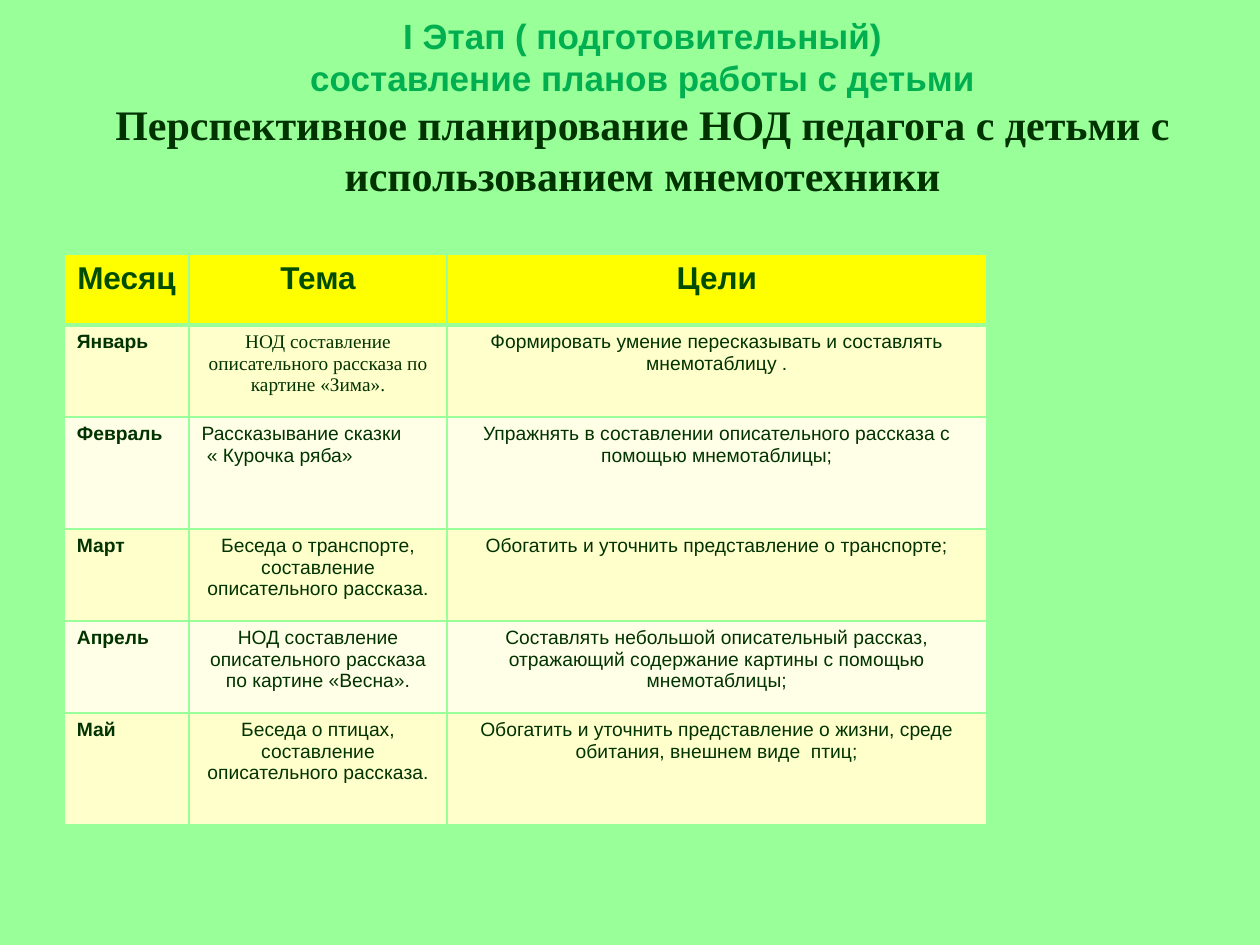
from lxml import etree
from pptx import Presentation
from pptx import util as u
from pptx.dml.color import RGBColor
from pptx.enum import text
from pptx.oxml import ns

COLORS = {
    "background": "99FF99", "stage": "00B050", "dark": "003300",
    "header_text": "004C00", "header": "FFFF00", "odd": "FFFFCC", "even": "FFFFE7",
}


def add_run(p, words, size, color, bold=False, font="Arial"):
    r = p.add_run()
    r.text = words
    r.font.size = u.Pt(size)
    r.font.name = font
    r.font.bold = bold
    r.font.color.rgb = RGBColor.from_string(COLORS[color])


def set_borders(cell, bottom):
    tcPr = cell._tc.get_or_add_tcPr()
    widths = {"a:lnL": 1, "a:lnR": 1, "a:lnT": 1, "a:lnB": bottom}
    for i, (tag, width) in enumerate(widths.items()):
        ln = etree.Element(ns.qn(tag), w=str(u.Pt(width)))
        fill = etree.SubElement(ln, ns.qn("a:solidFill"))
        etree.SubElement(fill, ns.qn("a:srgbClr"), val=COLORS["background"])
        tcPr.insert(i, ln)


prs = Presentation()
prs.slide_width, prs.slide_height = u.Inches(10), u.Inches(7.5)
s = prs.slides.add_slide(prs.slide_layouts[5])
s.background.fill.solid()
s.background.fill.fore_color.rgb = RGBColor.from_string(COLORS["background"])

# Title
title = s.shapes.title
title.left, title.top = u.Inches(0.2), u.Inches(0)
title.width, title.height = u.Inches(9.8), u.Inches(1.7)
tf = title.text_frame
tf.word_wrap = True
tf.auto_size = text.MSO_AUTO_SIZE.NONE
tf.vertical_anchor = text.MSO_ANCHOR.MIDDLE
p = tf.paragraphs[0]
p.alignment = text.PP_ALIGN.CENTER
for line in ("I Этап ( подготовительный)", "составление планов работы с детьми"):
    add_run(p, line, 20, "stage", True)
    p.add_line_break()
add_run(p, "Перспективное планирование НОД педагога с детьми с использованием мнемотехники",
        24, "dark", True, "Times New Roman")

# Plan by month
plan = [
    ("Месяц", "Тема", "Цели"),
    ("Январь", "НОД составление описательного рассказа по картине «Зима».",
     "Формировать умение пересказывать и составлять мнемотаблицу ."),
    ("Февраль", "Рассказывание сказки\n « Курочка ряба»",
     "Упражнять в составлении описательного рассказа с помощью мнемотаблицы;"),
    ("Март", "Беседа о транспорте, составление описательного рассказа.",
     "Обогатить и уточнить представление о транспорте;"),
    ("Апрель", "НОД составление описательного рассказа по картине «Весна».",
     "Составлять небольшой описательный рассказ, отражающий содержание картины "
     "с помощью мнемотаблицы;"),
    ("Май", "Беседа о птицах, составление описательного рассказа.",
     "Обогатить и уточнить представление о жизни, среде обитания, внешнем виде  птиц;"),
]
widths = [0.99, 2.05, 4.28]
heights = [0.56, 0.73, 0.89, 0.73, 0.73, 0.89]
table = s.shapes.add_table(len(plan), len(widths), u.Inches(0.51), u.Inches(2.02),
                           u.Inches(sum(widths)), u.Inches(sum(heights))).table
for column, width in zip(table.columns, widths):
    column.width = u.Inches(width)

for i, (row, height) in enumerate(zip(plan, heights)):
    table.rows[i].height = u.Inches(height)
    header = i == 0
    band = "header" if header else "odd" if i % 2 else "even"
    for j, words in enumerate(row):
        cell = table.cell(i, j)
        cell.fill.solid()
        cell.fill.fore_color.rgb = RGBColor.from_string(COLORS[band])
        set_borders(cell, 3 if header else 1)
        lines = words.split("\n")
        left = len(lines) > 1 or (j == 0 and not header)
        font = "Times New Roman" if (i, j) == (1, 1) else "Arial"
        tf = cell.text_frame
        for k, line in enumerate(lines):
            p = tf.add_paragraph() if k else tf.paragraphs[0]
            p.alignment = text.PP_ALIGN.LEFT if left else text.PP_ALIGN.CENTER
            add_run(p, line, 18 if header else 11,
                    "header_text" if header else "dark", header or j == 0, font)

prs.save("out.pptx")
